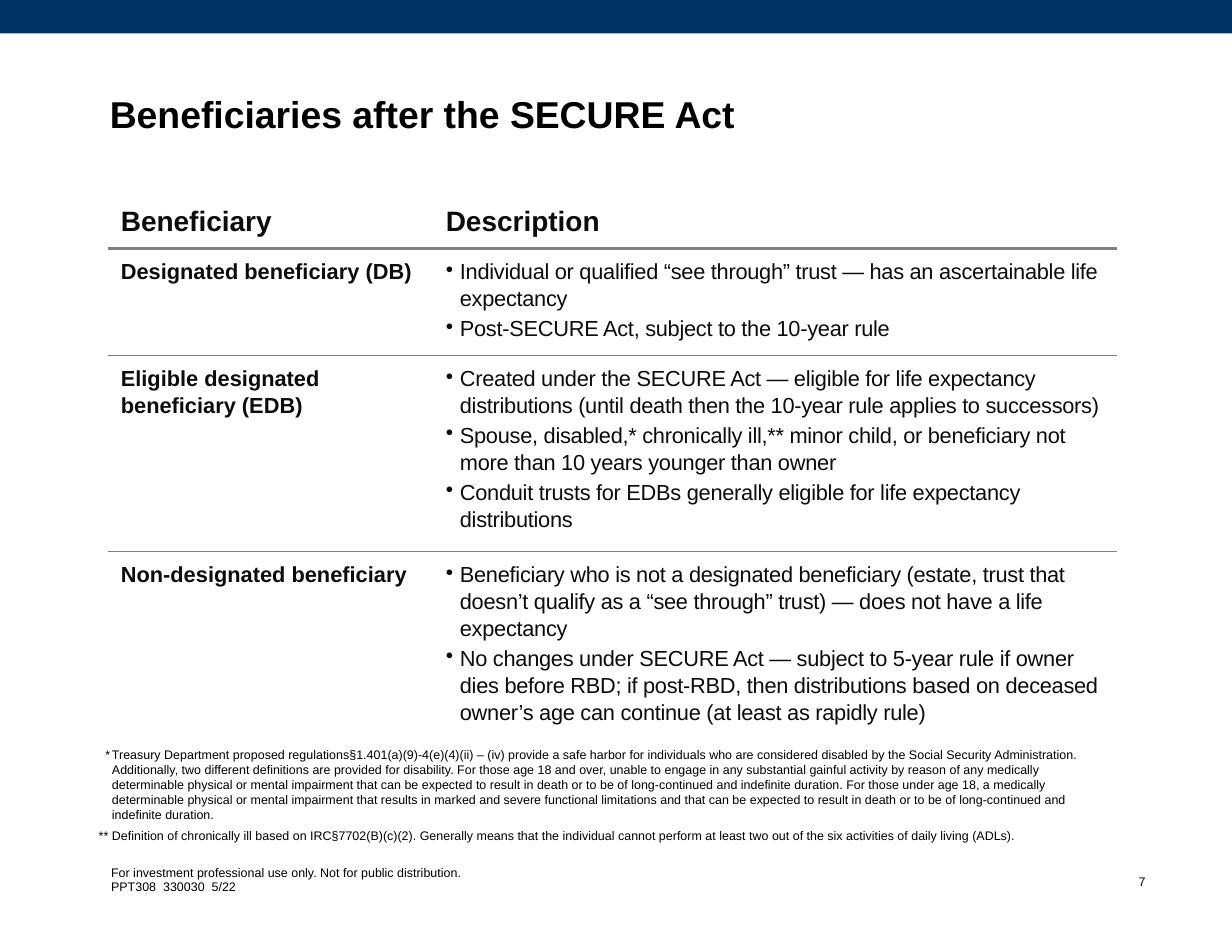
from lxml import etree
from pptx import Presentation
from pptx.dml.color import RGBColor
from pptx.enum.shapes import MSO_SHAPE
from pptx.enum.text import MSO_ANCHOR, PP_ALIGN
from pptx.oxml.ns import qn
from pptx.util import Cm, Pt

RECT = MSO_SHAPE.RECTANGLE
TOP, MIDDLE, BOTTOM = MSO_ANCHOR.TOP, MSO_ANCHOR.MIDDLE, MSO_ANCHOR.BOTTOM
LEFT, RIGHT = PP_ALIGN.LEFT, PP_ALIGN.RIGHT
FACE = "Arial"
NAVY, BLACK, INK, GREY = "003365", "000000", "0C0C0C", "808080"
SIDES = ("margin_left", "margin_top", "margin_right", "margin_bottom")
HANG = 0.32

HEADS = ["Beneficiary", "Description"]
ROWS = [
    ("Designated beneficiary (DB)", [
        "Individual or qualified “see through” trust — has an ascertainable life expectancy",
        "Post-SECURE Act, subject to the 10-year rule",
    ]),
    ("Eligible designated beneficiary (EDB)", [
        "Created under the SECURE Act — eligible for life expectancy distributions "
        "(until death then the 10-year rule applies to successors)",
        "Spouse, disabled,* chronically ill,** minor child, or beneficiary not "
        "more than 10 years younger than owner",
        "Conduit trusts for EDBs generally eligible for life expectancy distributions",
    ]),
    ("Non-designated beneficiary", [
        "Beneficiary who is not a designated beneficiary (estate, trust that doesn’t "
        "qualify as a “see through” trust) — does not have a life expectancy",
        "No changes under SECURE Act — subject to 5-year rule if owner dies before RBD; "
        "if post-RBD, then distributions based on deceased owner’s age can continue "
        "(at least as rapidly rule)",
    ]),
]
NOTES = [
    ("*\tTreasury Department proposed regulations§1.401(a)(9)-4(e)(4)(ii) – (iv) provide a "
     "safe harbor for individuals who are considered disabled by the Social Security "
     "Administration. Additionally, two different definitions are provided for disability. "
     "For those age 18 and over, unable to engage in any substantial gainful activity by "
     "reason of any medically determinable physical or mental impairment that can be "
     "expected to result in death or to be of long-continued and indefinite duration. For "
     "those under age 18, a medically determinable physical or mental impairment that "
     "results in marked and severe functional limitations and that can be expected to "
     "result in death or to be of long-continued and indefinite duration.", 0.15),
    ("**\tDefinition of chronically ill based on IRC§7702(B)(c)(2). Generally means that the "
     "individual cannot perform at least two out of the six activities of daily living "
     "(ADLs).", 0.3),
]
FOOT = ["For investment professional use only. Not for public distribution.",
        "PPT308  330030  5/22"]


def color(code):
    """Turn a hex string into a colour."""
    return RGBColor.from_string(code)


def apply(item, form):
    """Set each attribute named in a dict of format values."""
    for name, value in form.items():
        setattr(item, name, value)


def hang(para, left, first):
    """Give a paragraph a left margin and a hanging first line."""
    props = para._p.get_or_add_pPr()
    props.set("marL", str(Cm(left)))
    props.set("indent", str(-Cm(first)))


def bullet(para):
    """Put a round bullet on a hanging paragraph."""
    hang(para, HANG, HANG)
    mark = etree.SubElement(para._p.get_or_add_pPr(), qn("a:buChar"))
    mark.set("char", "•")


def write(frame, lines, size, hue, bold=False, form=None):
    """Fill a text frame with one paragraph per line and return them."""
    paras = []
    for rank, line in enumerate(lines):
        para = frame.add_paragraph() if rank else frame.paragraphs[0]
        run = para.add_run()
        run.text = line
        apply(run.font, {"name": FACE, "size": Pt(size), "bold": bold})
        run.font.color.rgb = color(hue)
        apply(para, form or {})
        paras.append(para)
    return paras


def label(slide, spot, lines, size, bold=False, wrap=True, anchor=TOP,
          pads=(0.28, 0.15, 0.28, 0.15), form=None):
    """Add a text box and return its paragraphs."""
    frame = slide.shapes.add_textbox(*map(Cm, spot)).text_frame
    apply(frame, {"word_wrap": wrap, "vertical_anchor": anchor})
    apply(frame, dict(zip(SIDES, map(Cm, pads))))
    return write(frame, lines, size, BLACK, bold, form)


def banner(slide, width):
    """Draw the band across the top."""
    band = slide.shapes.add_shape(RECT, 0, 0, width, Cm(0.76))
    band.shadow.inherit = False
    band.fill.solid()
    band.fill.fore_color.rgb = color(NAVY)
    band.line.fill.background()


def border(cell, tag, width):
    """Draw one grey edge of a cell."""
    edge = etree.Element(qn(tag), w=str(Pt(width)))
    fill = etree.SubElement(edge, qn("a:solidFill"))
    etree.SubElement(fill, qn("a:srgbClr"), val=GREY)
    cell._tc.get_or_add_tcPr().insert(0, edge)


def rule(grid, row, width):
    """Draw a line under one table row."""
    for col in range(len(grid.columns)):
        border(grid.cell(row, col), "a:lnB", width)
        border(grid.cell(row + 1, col), "a:lnT", width)


def fill_cell(cell, lines, size, bold, anchor=TOP):
    """Write the lines into a plain cell and return the paragraphs."""
    cell.fill.background()
    cell.vertical_anchor = anchor
    apply(cell, dict(zip(SIDES, map(Cm, (0.28, 0.2, 0.28, 0.2)))))
    return write(cell.text_frame, lines, size, INK, bold, {"line_spacing": 1.1})


def points(cell, lines):
    """Fill a cell with bulleted, slightly tightened text."""
    for rank, para in enumerate(fill_cell(cell, lines, 14, False)):
        bullet(para)
        para.runs[0]._r.get_or_add_rPr().set("spc", "-20")
        if rank:
            para.space_before = Pt(1.9)


def chart_of_heirs(slide):
    """Build the table of beneficiaries."""
    widths, heights = (7.37, 15.49), (1.27, 2.29, 4.19, 4.45)
    spot = (2.46, 4.37, sum(widths), sum(heights))
    grid = slide.shapes.add_table(len(heights), len(widths), *map(Cm, spot)).table
    apply(grid, {"first_row": False, "horz_banding": False})
    for col, width in zip(grid.columns, widths):
        col.width = Cm(width)
    for row, height in zip(grid.rows, heights):
        row.height = Cm(height)
    for col, head in enumerate(HEADS):
        fill_cell(grid.cell(0, col), [head], 18, True, MIDDLE)
    for row, (name, lines) in enumerate(ROWS, 1):
        fill_cell(grid.cell(row, 0), [name], 14, True)
        points(grid.cell(row, 1), lines)
    for row in reversed(range(len(ROWS))):
        rule(grid, row, 1 if row else 2.25)


def footnotes(slide):
    """Add the notes below the table, each hung on its asterisks."""
    paras = label(slide, (1.96, 18.62, 23.24, 0.64), [text for text, _ in NOTES], 8,
                  anchor=BOTTOM, form={"space_after": Pt(4)})
    for para, (_, first) in zip(paras, NOTES):
        hang(para, 0.3, first)


def main():
    """Build the slide and save it."""
    deck = Presentation()
    apply(deck, {"slide_width": Cm(27.94), "slide_height": Cm(21.59)})
    slide = deck.slides.add_slide(deck.slide_layouts[6])
    banner(slide, deck.slide_width)
    label(slide, (25.53, 19.71, 0.58, 0.58), ["7"], 8, pads=(0, 0.15, 0.13, 0.15),
          form={"alignment": RIGHT, "line_spacing": 0.9})
    label(slide, (2.24, 19.46, 8.64, 0.97), FOOT, 8, wrap=False,
          form={"alignment": LEFT})
    label(slide, (2.21, 2.03, 23.22, 0.89), ["Beneficiaries after the SECURE Act"], 24,
          bold=True, form={"line_spacing": 0.9})
    footnotes(slide)
    chart_of_heirs(slide)
    deck.save("out.pptx")


if __name__ == "__main__":
    main()
